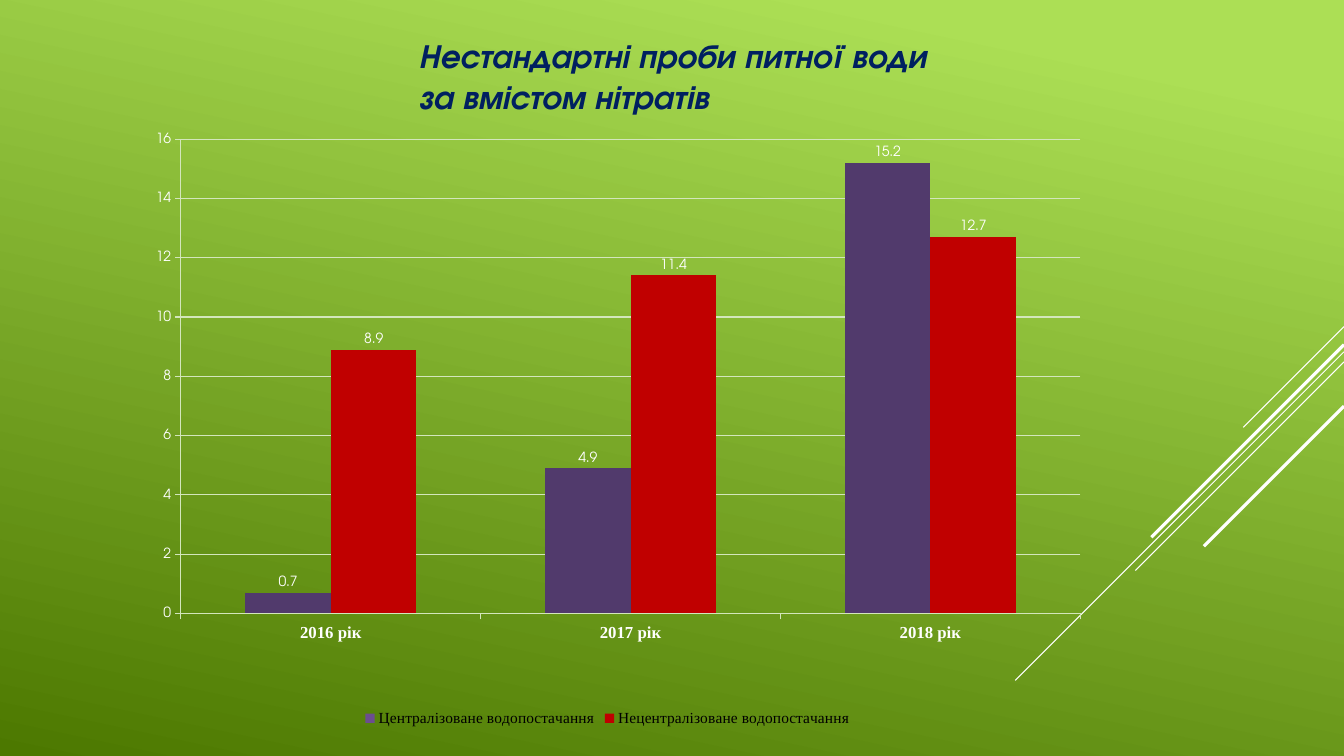
from dataclasses import dataclass

from lxml import etree
from pptx import Presentation
from pptx.chart.data import CategoryChartData
from pptx.dml.color import RGBColor
from pptx.enum.chart import (XL_CHART_TYPE as ChartType, XL_LABEL_POSITION as LabelPosition,
                             XL_LEGEND_POSITION as LegendPosition, XL_TICK_MARK as TickMark)
from pptx.enum.shapes import MSO_CONNECTOR as Connector
from pptx.enum.text import MSO_ANCHOR as Anchor, MSO_AUTO_SIZE as AutoSize, PP_ALIGN as Align
from pptx.oxml.ns import qn
from pptx.util import Inches, Pt


@dataclass(frozen=True)
class Theme:
    light: RGBColor = RGBColor.from_string("ACDF55")
    dark: RGBColor = RGBColor.from_string("4C7800")
    white: RGBColor = RGBColor.from_string("FFFFFF")
    black: RGBColor = RGBColor.from_string("000000")
    navy: RGBColor = RGBColor.from_string("002060")
    grid: RGBColor = RGBColor.from_string("D3E6BC")
    purple: RGBColor = RGBColor.from_string("6C4D90")
    deep_purple: RGBColor = RGBColor.from_string("513A6C")
    red: RGBColor = RGBColor.from_string("C00000")
    sans: str = "TeX Gyre Adventor"
    serif: str = "Times New Roman"
    title_size: int = 24
    legend_size: int = 11
    category_size: int = 12
    chart_size: int = 10


THEME = Theme()
SLIDE_WIDTH, SLIDE_HEIGHT = 13.33, 7.5

# Diagonals start at the right edge: start height, run (equal across and down), width
DIAGONALS = [(3.24, 1.0, 0.75), (3.49, 3.26, 0.75), (3.59, 2.07, 0.75),
             (3.42, 1.91, 2.25), (4.03, 1.39, 2.25)]

YEARS = ["2016 рік", "2017 рік", "2018 рік"]
# Name, values, legend colour, column colour
SUPPLIES = [
    ("Централізоване водопостачання", (0.7, 4.9, 15.2), THEME.purple, THEME.deep_purple),
    ("Нецентралізоване водопостачання", (8.9, 11.4, 12.7), THEME.red, THEME.red),
]
PLOT_LAYOUT = {"layoutTarget": "inner", "xMode": "edge", "yMode": "edge",
               "x": 0.067, "y": 0.041, "w": 0.913, "h": 0.769}


def style_font(font, name, size, color, bold=False, italic=False):
    font.name, font.size, font.bold, font.italic = name, Pt(size), bold, italic
    font.color.rgb = color


def paint_background(page):
    fill = page.background.fill
    fill.gradient()
    fill.gradient_angle = 360 - 102
    for stop, position, color in zip(fill.gradient_stops, (0.1, 1), (THEME.light, THEME.dark)):
        stop.position = position
        stop.color.rgb = color


def add_diagonals(page, right):
    for top, run, width in DIAGONALS:
        line = page.shapes.add_connector(Connector.STRAIGHT, Inches(right), Inches(top),
                                         Inches(right - run), Inches(top + run))
        line.line.color.rgb = THEME.white
        line.line.width = Pt(width)
        etree.SubElement(line.element.spPr, qn("a:effectLst"))


def fix_plot_layout(chart):
    plot_area = chart.element.find(".//" + qn("c:plotArea"))
    for old in plot_area.findall(qn("c:layout")):
        plot_area.remove(old)
    layout = etree.Element(qn("c:layout"))
    manual = etree.SubElement(layout, qn("c:manualLayout"))
    for tag, value in PLOT_LAYOUT.items():
        etree.SubElement(manual, qn("c:" + tag)).set("val", str(value))
    plot_area.insert(0, layout)


def style_axes(chart):
    for axis in (chart.category_axis, chart.value_axis):
        axis.major_tick_mark = TickMark.OUTSIDE
        axis.minor_tick_mark = TickMark.NONE
        axis.format.line.color.rgb = THEME.grid
        axis.format.line.width = Pt(0.75)
    style_font(chart.category_axis.tick_labels.font, THEME.serif, THEME.category_size,
               THEME.white, bold=True)
    values = chart.value_axis
    values.minimum_scale, values.maximum_scale, values.major_unit = 0, 16, 2
    values.has_major_gridlines = True
    values.major_gridlines.format.line.color.rgb = THEME.grid
    values.major_gridlines.format.line.width = Pt(0.75)


def style_columns(plot):
    plot.gap_width, plot.overlap, plot.vary_by_categories = 150, 0, False
    for series, (_, values, legend_color, column_color) in zip(plot.series, SUPPLIES):
        series.format.fill.solid()
        series.format.fill.fore_color.rgb = legend_color
        if column_color != legend_color:
            for index in range(len(values)):
                fill = series.points[index].format.fill
                fill.solid()
                fill.fore_color.rgb = column_color
        labels = series.data_labels
        labels.show_value = True
        labels.position = LabelPosition.OUTSIDE_END
        style_font(labels.font, THEME.sans, THEME.chart_size, THEME.white)


def add_nitrate_chart(page, left, top, width, height):
    data = CategoryChartData()
    data.categories = YEARS
    for name, values, *_ in SUPPLIES:
        data.add_series(name, values)
    chart = page.shapes.add_chart(ChartType.COLUMN_CLUSTERED, Inches(left), Inches(top),
                                  Inches(width), Inches(height), data).chart
    style_font(chart.font, THEME.sans, THEME.chart_size, THEME.white)
    chart.has_title = False
    chart.has_legend = True
    chart.legend.position = LegendPosition.BOTTOM
    chart.legend.include_in_layout = False
    style_font(chart.legend.font, THEME.serif, THEME.legend_size, THEME.black)
    style_axes(chart)
    style_columns(chart.plots[0])
    fix_plot_layout(chart)


def add_title(page, left, top, width, height):
    title = page.shapes.title
    title.left, title.top = Inches(left), Inches(top)
    title.width, title.height = Inches(width), Inches(height)
    frame = title.text_frame
    frame.text = "Нестандартні проби питної води\nза вмістом нітратів"
    frame.word_wrap, frame.auto_size = True, AutoSize.NONE
    frame.vertical_anchor = Anchor.TOP
    for para in frame.paragraphs:
        para.alignment = Align.LEFT
        for span in para.runs:
            style_font(span.font, THEME.sans, THEME.title_size, THEME.navy,
                       bold=True, italic=True)


def main():
    deck = Presentation()
    deck.slide_width, deck.slide_height = Inches(SLIDE_WIDTH), Inches(SLIDE_HEIGHT)
    page = deck.slides.add_slide(deck.slide_layouts.get_by_name("Title Only"))

    # Backdrop
    paint_background(page)
    add_diagonals(page, SLIDE_WIDTH)

    # Content
    add_nitrate_chart(page, 1.14, 1.13, 9.77, 6.12)
    add_title(page, 4.05, 0.3, 6.58, 1.21)

    deck.save("out.pptx")


if __name__ == "__main__":
    main()
